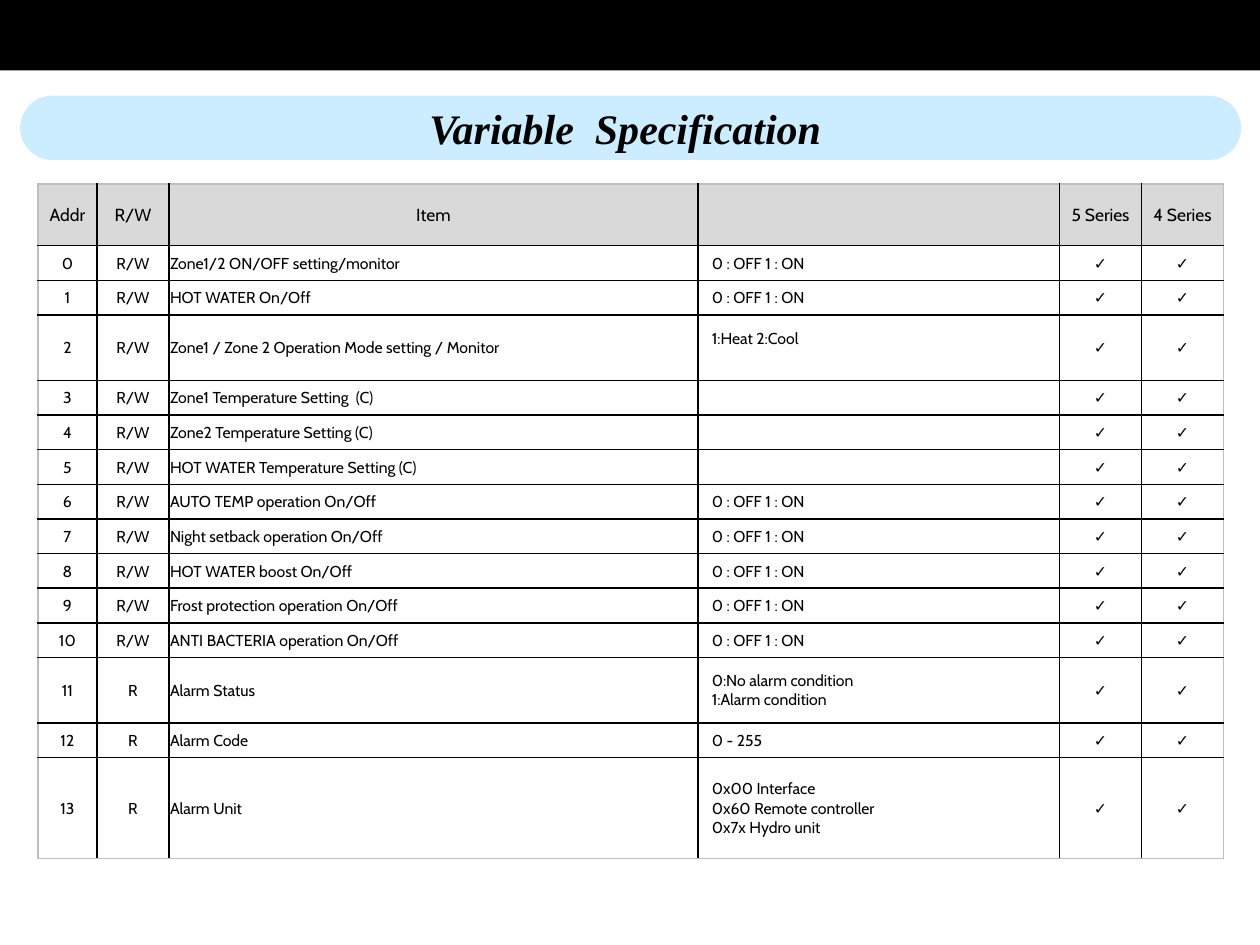
from lxml import etree
from pptx import Presentation
from pptx.dml.color import RGBColor
from pptx.enum.shapes import MSO_SHAPE
from pptx.enum.text import MSO_ANCHOR, PP_ALIGN
from pptx.oxml.ns import qn
from pptx.util import Inches, Pt

RECT, PILL = MSO_SHAPE.RECTANGLE, MSO_SHAPE.ROUNDED_RECTANGLE
MIDDLE = MSO_ANCHOR.MIDDLE
LEFT, CENTER, JUST = PP_ALIGN.LEFT, PP_ALIGN.CENTER, PP_ALIGN.JUSTIFY

BLACK, WHITE, GREY, EDGE, SKY = "000000", "FFFFFF", "D9D9D9", "BFBFBF", "CCECFF"
SWITCH = "0 : OFF 1 : ON"
HEAD = ["Addr", "R/W", "Item", "", "5 Series", "4 Series"]
ITEMS = [
    ("R/W", "Zone1/2 ON/OFF setting/monitor", SWITCH),
    ("R/W", "HOT WATER On/Off", SWITCH),
    ("R/W", "Zone1 / Zone 2 Operation Mode setting / Monitor", "1:Heat 2:Cool"),
    ("R/W", "Zone1 Temperature Setting  (C)", ""),
    ("R/W", "Zone2 Temperature Setting (C)", ""),
    ("R/W", "HOT WATER Temperature Setting (C)", ""),
    ("R/W", "AUTO TEMP operation On/Off", SWITCH),
    ("R/W", "Night setback operation On/Off", SWITCH),
    ("R/W", "HOT WATER boost On/Off", SWITCH),
    ("R/W", "Frost protection operation On/Off", SWITCH),
    ("R/W", "ANTI BACTERIA operation On/Off", SWITCH),
    ("R", "Alarm Status", "0:No alarm condition\v1:Alarm condition"),
    ("R", "Alarm Code", "0 - 255"),
    ("R", "Alarm Unit", "0x00 Interface\v0x60 Remote controller\v0x7x Hydro unit"),
]
WIDTHS = [0.47, 0.57, 4.2, 2.87, 0.65, 0.65]
HEIGHTS = {0: 0.49, 3: 0.52, 12: 0.52, 14: 0.8}
LOW = 0.275
MODE_ROW = 3


def rgb(color):
    return RGBColor.from_string(color)


def set_font(para, name, size):
    para.font.name = name
    para.font.size = Pt(size)
    para.font.color.rgb = rgb(BLACK)


def add_bar(slide, kind, left, top, width, height, color):
    bar = slide.shapes.add_shape(
        kind, Inches(left), Inches(top), Inches(width), Inches(height))
    bar.shadow.inherit = False
    bar.fill.solid()
    bar.fill.fore_color.rgb = rgb(color)
    bar.line.fill.background()
    return bar


def add_title(slide):
    bar = add_bar(slide, PILL, 0.16, 0.76, 9.69, 0.51, SKY)
    bar.adjustments[0] = 0.5
    frame = bar.text_frame
    frame.word_wrap = False
    frame.vertical_anchor = MIDDLE
    para = frame.paragraphs[0]
    para.text = "Variable  Specification "
    para.alignment = CENTER
    set_font(para, "Times New Roman", 24)
    para.font.bold = para.font.italic = True


def set_edges(cell, colors):
    """Draw the left, right, top and bottom borders, in that order."""
    props = cell._tc.get_or_add_tcPr()
    for side, color in zip("LRTB", colors):
        line = etree.SubElement(props, qn(f"a:ln{side}"), w=str(Pt(1)))
        fill = etree.SubElement(line, qn("a:solidFill"))
        etree.SubElement(fill, qn("a:srgbClr"), val=color)


def set_cell(cell, text, size, align, fill, indent):
    cell.text = text
    cell.vertical_anchor = MIDDLE
    cell.margin_left = Inches(indent)
    cell.margin_right = cell.margin_top = Inches(0.01)
    cell.margin_bottom = 0
    para = cell.text_frame.paragraphs[0]
    para.alignment = align
    set_font(para, "Cabin", size)
    if not text:
        # An empty cell takes its line height from the end mark.
        etree.SubElement(para._p, qn("a:endParaRPr"), sz=str(size * 100))
    cell.fill.solid()
    cell.fill.fore_color.rgb = rgb(fill)


def add_grid(slide):
    rows = [HEAD] + [[str(addr), *item, "✓", "✓"]
                     for addr, item in enumerate(ITEMS)]
    tall = [HEIGHTS.get(r, LOW) for r in range(len(rows))]
    table = slide.shapes.add_table(
        len(rows), len(HEAD), Inches(0.3), Inches(1.46),
        Inches(sum(WIDTHS)), Inches(sum(tall))).table
    table.first_row = table.horz_banding = False
    for col, width in zip(table.columns, WIDTHS):
        col.width = Inches(width)
    for row, height in zip(table.rows, tall):
        row.height = Inches(height)
    last_row, last_col = len(rows) - 1, len(HEAD) - 1
    for r, row in enumerate(rows):
        for c, text in enumerate(row):
            cell = table.cell(r, c)
            outer = (c == 0, c == last_col, r == 0, r == last_row)
            set_edges(cell, [EDGE if out else BLACK for out in outer])
            if r == 0:
                set_cell(cell, text, 10, CENTER, GREY, 0.01)
            else:
                item = JUST if r <= MODE_ROW else LEFT
                align = {2: item, 3: LEFT}.get(c, CENTER)
                set_cell(cell, text, 9, align, WHITE, 0.11 if c == 3 else 0.01)
    table.cell(MODE_ROW, 3).margin_bottom = Inches(0.15)


def main():
    deck = Presentation()
    deck.slide_width, deck.slide_height = Inches(10), Inches(7.5)
    slide = deck.slides.add_slide(deck.slide_layouts[6])
    add_bar(slide, RECT, 0, 0, 10, 0.56, BLACK)
    add_title(slide)
    add_grid(slide)
    deck.save("out.pptx")


if __name__ == "__main__":
    main()
